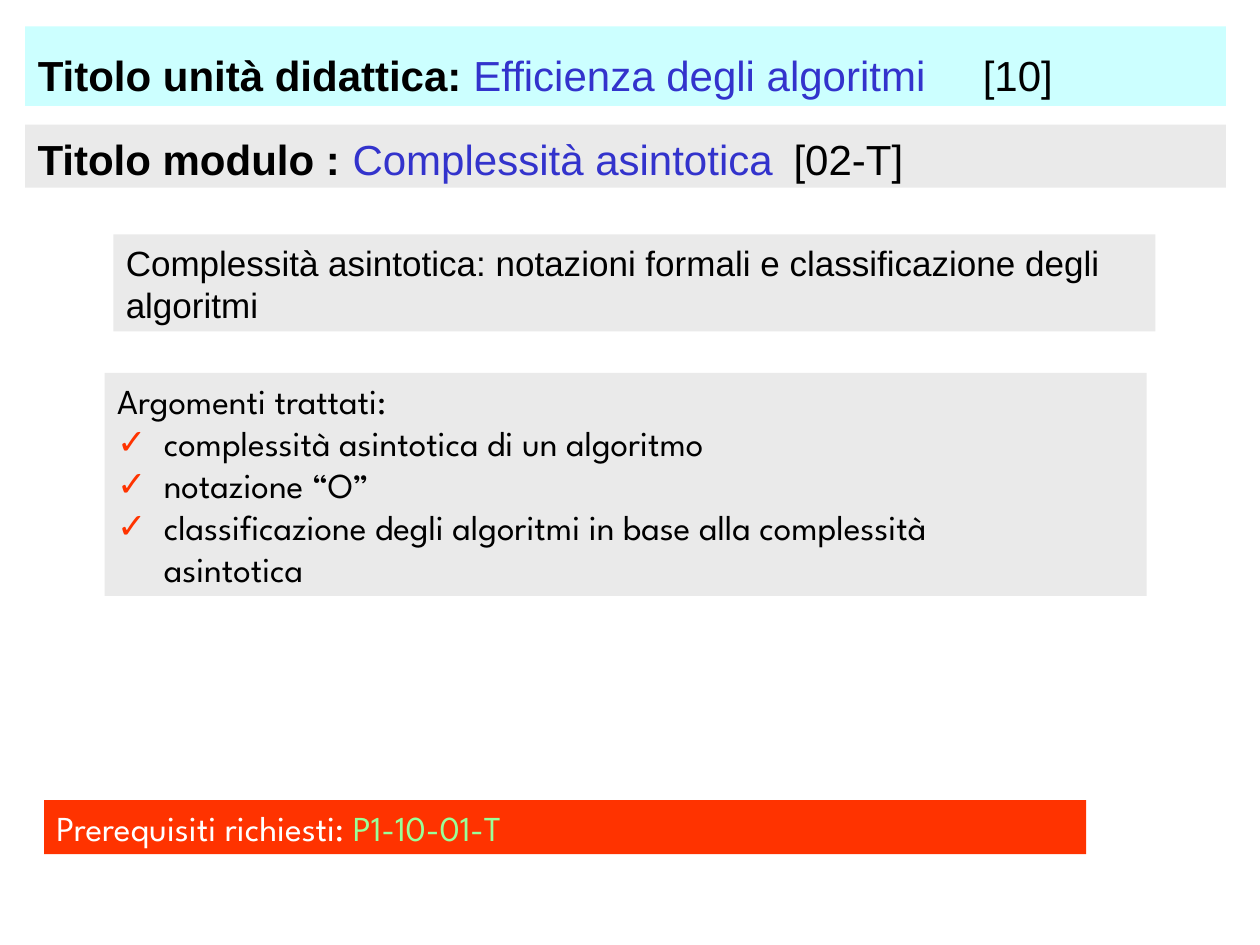
from dataclasses import dataclass

from lxml import etree
from pptx import Presentation
from pptx.dml.color import RGBColor
from pptx.enum import shapes, text
from pptx.oxml.ns import qn
from pptx.util import Inches, Pt


@dataclass(frozen=True)
class Theme:
    cyan: str = "CCFFFF"
    grey: str = "EAEAEA"
    red: str = "FF3300"
    black: str = "000000"
    blue: str = "3333CC"
    white: str = "FFFFFF"
    green: str = "99FF99"
    heading_size: int = 24
    text_size: int = 20
    heading_font: str = "Arial"
    list_font: str = "League Spartan"
    line_height: float = 1.2


@dataclass(frozen=True)
class Span:
    words: str
    color: str
    bold: bool = False


@dataclass(frozen=True)
class Line:
    spans: tuple[Span, ...]
    bulleted: bool = False
    tabs: tuple[tuple[float, str], ...] = ()


@dataclass(frozen=True)
class Panel:
    left: float
    top: float
    width: float
    height: float
    fill: str
    font: str
    size: int
    lines: tuple[Line, ...]
    top_inset: float = 0.05


THEME = Theme()
CODE_TAB = (9.15, "r")
BULLET_INDENT = 0.37


def bullet_line(words: str) -> Line:
    return Line((Span(words, THEME.black),), bulleted=True)


UNIT = Panel(
    0.2, 0.21, 9.53, 0.63, THEME.cyan, THEME.heading_font, THEME.heading_size,
    (Line((Span("Titolo unità didattica: ", THEME.black, True),
           Span("Efficienza degli algoritmi\t", THEME.blue),
           Span("[10]", THEME.black)), tabs=(CODE_TAB,)),),
    top_inset=0.18)
MODULE = Panel(
    0.2, 0.99, 9.53, 0.5, THEME.grey, THEME.heading_font, THEME.heading_size,
    (Line((Span("Titolo modulo :\t", THEME.black, True),
           Span("Complessità asintotica\t", THEME.blue),
           Span("[02-T]", THEME.black)), tabs=((2.59, "l"), CODE_TAB)),),
    top_inset=0.07)
SUMMARY = Panel(
    0.9, 1.86, 8.27, 0.77, THEME.grey, THEME.heading_font, THEME.text_size,
    (Line((Span("Complessità asintotica: notazioni formali e classificazione "
                "degli algoritmi", THEME.black),)),),
    top_inset=0.06)
TOPICS = Panel(
    0.83, 2.96, 8.27, 1.77, THEME.grey, THEME.list_font, THEME.text_size,
    (Line((Span("Argomenti trattati:", THEME.black),)),
     bullet_line("complessità asintotica di un algoritmo"),
     bullet_line("notazione “O”"),
     bullet_line("classificazione degli algoritmi in base alla complessità\vasintotica")))
PREREQUISITES = Panel(
    0.35, 6.35, 8.27, 0.43, THEME.red, THEME.list_font, THEME.text_size,
    (Line((Span("Prerequisiti richiesti: ", THEME.white),
           Span("P1-10-01-T", THEME.green))),))


def set_bullet_and_tabs(para, line: Line) -> None:
    """Set the check mark or no bullet, the indent and the tab stops."""
    props = para._p.get_or_add_pPr()
    indent = Inches(BULLET_INDENT) if line.bulleted else 0
    props.set("marL", str(indent))
    props.set("indent", str(-indent))
    if line.bulleted:
        color = etree.SubElement(props, qn("a:buClr"))
        etree.SubElement(color, qn("a:srgbClr"), val=THEME.red)
        etree.SubElement(props, qn("a:buChar"), char="✓")
    else:
        etree.SubElement(props, qn("a:buNone"))
    if line.tabs:
        stops = etree.SubElement(props, qn("a:tabLst"))
        for position, align in line.tabs:
            etree.SubElement(stops, qn("a:tab"), pos=str(Inches(position)), algn=align)


def write_line(para, line: Line, panel: Panel) -> None:
    set_bullet_and_tabs(para, line)
    para.alignment = text.PP_ALIGN.LEFT
    para.space_before = Pt(0)
    para.line_spacing = Pt(panel.size * THEME.line_height)
    para.font.name = panel.font
    para.font.size = Pt(panel.size)
    for index, part in enumerate(line.spans):
        for row, words in enumerate(part.words.split("\v")):
            if row:
                para.add_line_break()
            span = para.add_run()
            span.text = words
            span.font.color.rgb = RGBColor.from_string(part.color)
            if part.bold:
                span.font.bold = True


def fill_panel(box, panel: Panel) -> None:
    box.left, box.top = Inches(panel.left), Inches(panel.top)
    box.width, box.height = Inches(panel.width), Inches(panel.height)
    box.fill.solid()
    box.fill.fore_color.rgb = RGBColor.from_string(panel.fill)
    box.line.fill.background()
    frame = box.text_frame
    frame.word_wrap = True
    frame.auto_size = text.MSO_AUTO_SIZE.NONE
    frame.vertical_anchor = text.MSO_ANCHOR.TOP
    frame.margin_top = Inches(panel.top_inset)
    for index, line in enumerate(panel.lines):
        para = frame.add_paragraph() if index else frame.paragraphs[0]
        write_line(para, line, panel)


def add_panel(slide, panel: Panel) -> None:
    box = slide.shapes.add_shape(
        shapes.MSO_SHAPE.RECTANGLE, Inches(panel.left), Inches(panel.top),
        Inches(panel.width), Inches(panel.height))
    box.shadow.inherit = False
    fill_panel(box, panel)


def main() -> None:
    deck = Presentation()
    deck.slide_width, deck.slide_height = Inches(10), Inches(7.5)
    slide = deck.slides.add_slide(deck.slide_layouts[1])
    fill_panel(slide.shapes.title, UNIT)
    fill_panel(slide.placeholders[1], TOPICS)
    for panel in (MODULE, SUMMARY, PREREQUISITES):
        add_panel(slide, panel)
    deck.save("out.pptx")


if __name__ == "__main__":
    main()
